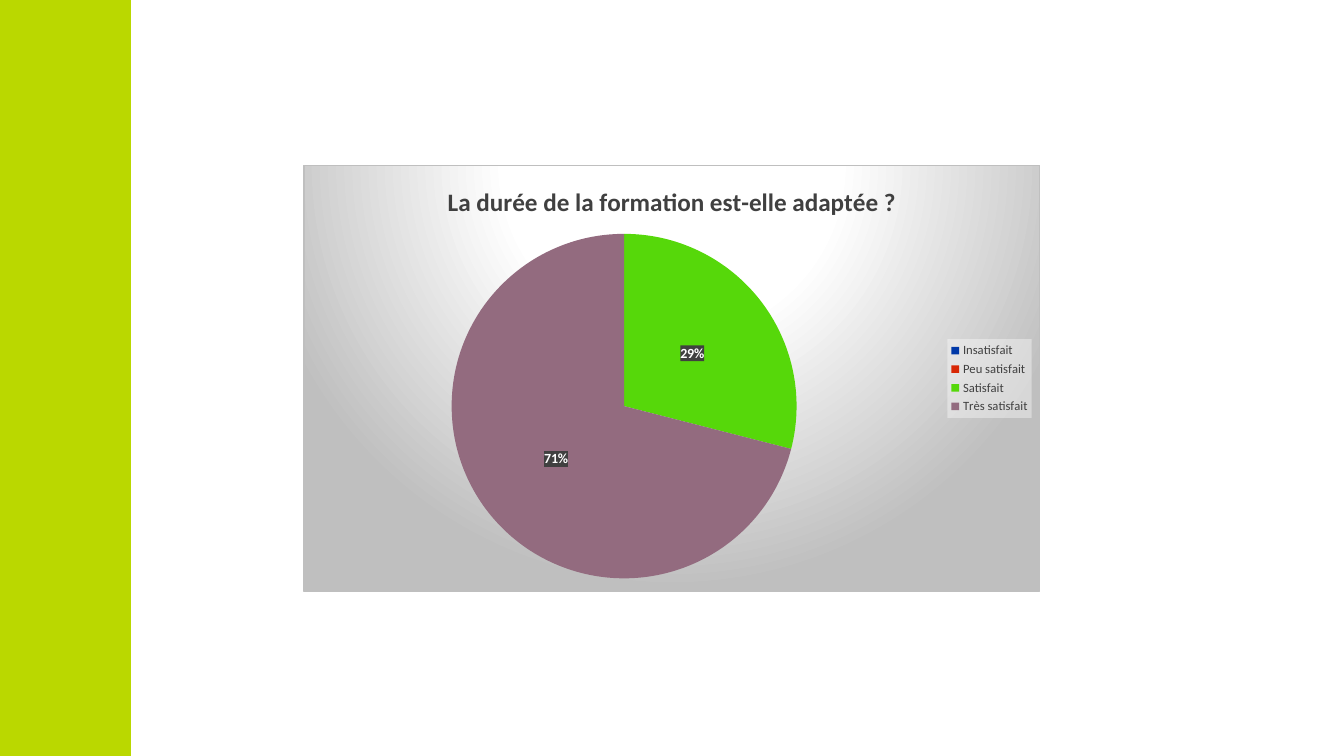
from dataclasses import dataclass

from lxml.etree import _Element
from pptx import Presentation
from pptx.chart.chart import Chart
from pptx.chart.data import CategoryChartData
from pptx.dml.color import RGBColor
from pptx.enum.chart import XL_CHART_TYPE, XL_LABEL_POSITION, XL_LEGEND_POSITION
from pptx.enum.shapes import MSO_SHAPE
from pptx.oxml import parse_xml
from pptx.oxml.ns import nsdecls
from pptx.slide import Slide
from pptx.text.text import Font
from pptx.util import Inches, Pt


@dataclass(frozen=True)
class Theme:
    font: str = "Calibri"
    band: str = "BAD800"
    light: str = "FFFFFF"
    grey: str = "BFBFBF"
    dark: str = "404040"
    title_size: float = 18
    label_size: float = 10
    legend_size: float = 9


@dataclass(frozen=True)
class Answer:
    name: str
    percent: int
    color: str


THEME = Theme()
QUESTION = "La durée de la formation est-elle adaptée ?"
ANSWERS = [
    Answer("Insatisfait", 0, "0038A8"),
    Answer("Peu satisfait", 0, "D82705"),
    Answer("Satisfait", 29, "56D80A"),
    Answer("Très satisfait", 71, "936B7F"),
]


def style_font(font: Font, size: float, color: str, bold: bool = False) -> None:
    font.name = THEME.font
    font.size = Pt(size)
    font.bold = bold
    font.color.rgb = RGBColor.from_string(color)


def chart_xml(tag: str, body: str) -> _Element:
    return parse_xml(f"<c:{tag} {nsdecls('c', 'a')}>{body}</c:{tag}>")


def clear_fill(color: str, opacity: int) -> _Element:
    """Return shape properties with a see-through fill, opacity in percent."""
    return chart_xml("spPr", f'<a:solidFill><a:srgbClr val="{color}">'
                             f'<a:alpha val="{opacity * 1000}"/></a:srgbClr></a:solidFill>'
                             '<a:ln><a:noFill/></a:ln>')


def add_band(slide: Slide) -> None:
    sp = slide.shapes.add_shape(MSO_SHAPE.RECTANGLE, 0, 0, Inches(1.3), Inches(7.5))
    sp.shadow.inherit = False
    sp.fill.solid()
    sp.fill.fore_color.rgb = RGBColor.from_string(THEME.band)
    sp.line.fill.background()


def style_background(chart: Chart) -> None:
    """Give the chart area a circular gradient centred above its top edge."""
    stops = "".join(
        f'<a:gs pos="{pos * 1000}"><a:srgbClr val="{color}"/></a:gs>'
        for pos, color in ((0, THEME.light), (39, THEME.light), (100, THEME.grey)))
    area = chart_xml("spPr", f"""<a:gradFill><a:gsLst>{stops}</a:gsLst>
        <a:path path="circle"><a:fillToRect l="50000" t="-80000" r="50000" b="180000"/></a:path>
        </a:gradFill><a:ln w="{Pt(0.75)}"><a:solidFill><a:srgbClr val="{THEME.grey}"/>
        </a:solidFill></a:ln>""")
    chart.element.find("{*}chart").addnext(area)


def place_pie(chart: Chart, x: float, y: float, w: float, h: float) -> None:
    """Fix the pie's frame, in fractions of the chart area."""
    plot_area = chart.element.find("{*}chart/{*}plotArea")
    for old in plot_area.findall("{*}layout"):
        plot_area.remove(old)
    sizes = "".join(f'<c:{key} val="{val}"/>'
                    for key, val in (("x", x), ("y", y), ("w", w), ("h", h)))
    plot_area.insert(0, chart_xml("layout", '<c:manualLayout><c:layoutTarget val="inner"/>'
                                            '<c:xMode val="edge"/><c:yMode val="edge"/>'
                                            f'{sizes}</c:manualLayout>'))


def style_slices(chart: Chart) -> None:
    plot = chart.plots[0]
    plot.vary_by_categories = True
    series = plot.series[0]
    labels = series.data_labels
    labels.show_percentage = True
    labels.show_value = False
    labels.number_format = "0%"
    labels.number_format_is_linked = False
    labels.position = XL_LABEL_POSITION.CENTER
    style_font(labels.font, THEME.label_size, THEME.light, bold=True)
    dlbls = series.points[0]._element.find("{*}dLbls")
    dlbls.find("{*}txPr").addprevious(clear_fill(THEME.dark, 90))
    for i, answer in enumerate(ANSWERS):
        fmt = series.points[i].format
        fmt.fill.solid()
        fmt.fill.fore_color.rgb = RGBColor.from_string(answer.color)
        fmt.line.fill.background()
        if not answer.percent:
            dlbls.insert(i, chart_xml("dLbl", f'<c:idx val="{i}"/><c:delete val="1"/>'))


def style_legend(chart: Chart) -> None:
    chart.has_legend = True
    legend = chart.legend
    legend.position = XL_LEGEND_POSITION.RIGHT
    legend.include_in_layout = False
    style_font(legend.font, THEME.legend_size, THEME.dark)
    chart.element.find("{*}chart/{*}legend/{*}txPr").addprevious(clear_fill(THEME.light, 39))


def add_answer_chart(slide: Slide) -> None:
    data = CategoryChartData()
    data.categories = [answer.name for answer in ANSWERS]
    data.add_series("Réponses", [answer.percent for answer in ANSWERS])
    chart = slide.shapes.add_chart(XL_CHART_TYPE.PIE, Inches(3.01), Inches(1.64),
                                   Inches(7.31), Inches(4.23), data).chart
    style_font(chart.font, THEME.label_size, THEME.dark)
    chart.has_title = True
    r = chart.chart_title.text_frame.paragraphs[0].add_run()
    r.text = QUESTION
    style_font(r.font, THEME.title_size, THEME.dark, bold=True)
    chart.chart_title.include_in_layout = False
    style_background(chart)
    place_pie(chart, 0.2, 0.16, 0.47, 0.81)
    style_slices(chart)
    style_legend(chart)


def main() -> None:
    prs = Presentation()
    prs.slide_width, prs.slide_height = Inches(13.33), Inches(7.5)
    slide = prs.slides.add_slide(prs.slide_layouts[6])
    add_band(slide)
    add_answer_chart(slide)
    prs.save("out.pptx")


if __name__ == "__main__":
    main()
